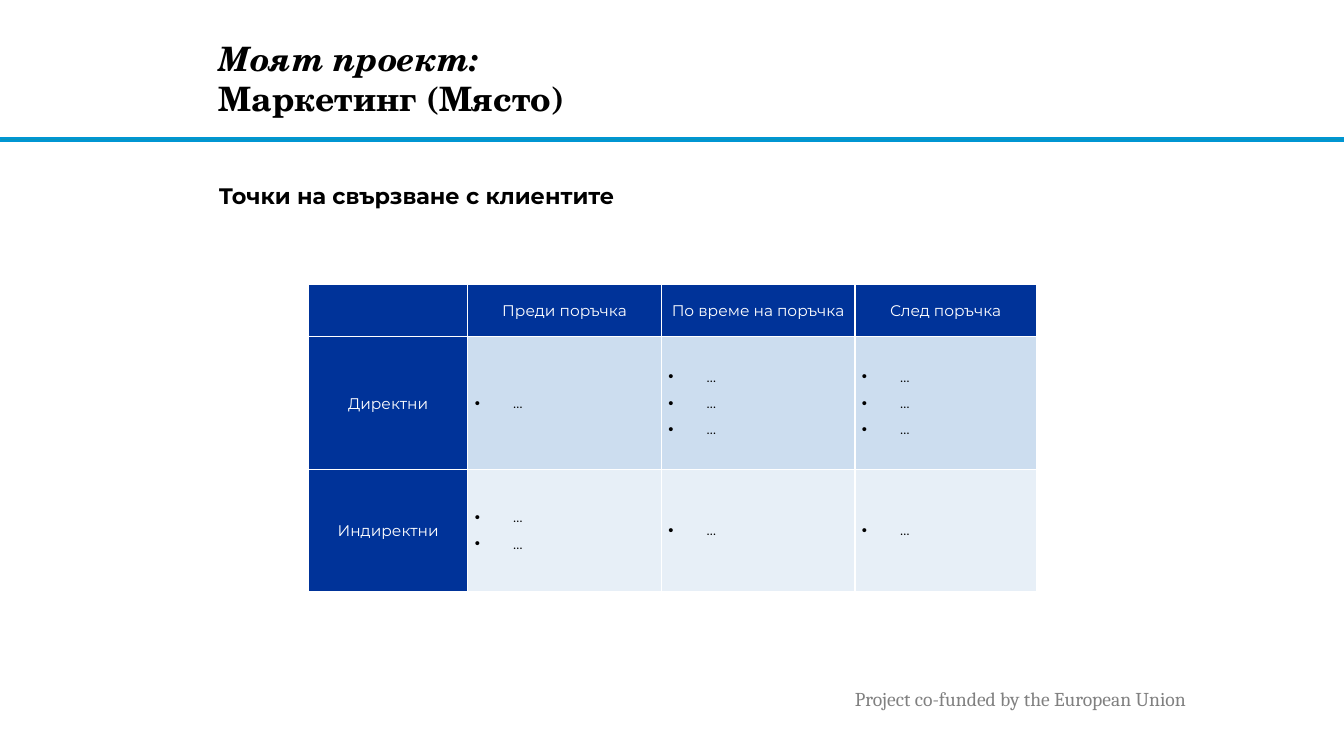
from lxml import etree
from pptx import Presentation
from pptx.dml.color import RGBColor
from pptx.enum import shapes, text
from pptx.oxml import ns
from pptx.util import Inches, Pt

# Content
TITLE = [("Моят проект:", True), ("Маркетинг (Място)", False)]
SUBTITLE = "Точки на свързване с клиентите"
FOOTER = "Project co-funded by the European Union"
HEADINGS = ["", "Преди поръчка", "По време на поръчка", "След поръчка"]
CONTACT_POINTS = [  # row label, bullets per stage, row colour
    ("Директни", [["…"], ["…"] * 3, ["…"] * 3], "CCDDEF"),
    ("Индиректни", [["…"] * 2, ["…"], ["…"]], "E7EFF7"),
]
COLUMN_WIDTHS = [1.58, 1.92, 1.92, 1.8]
ROW_HEIGHTS = [0.52, 1.32, 1.21]

# Style
BODY_FONT, TITLE_FONT, FOOTER_FONT = "Montserrat", "TeX Gyre Schola", "Cambria"
NAVY, WHITE, BLACK = "003399", "FFFFFF", "000000"
LEFT = 2.17
BULLET_INDENT = 0.38


def color(hex_value):
    return RGBColor.from_string(hex_value)


def add_text(paragraph, content, font=BODY_FONT, size=11, fill=BLACK, bold=False, italic=False):
    run = paragraph.add_run()
    run.text = content
    run.font.name = font
    run.font.size = Pt(size)
    run.font.bold = bold
    run.font.italic = italic
    run.font.color.rgb = color(fill)


def set_margins(frame, horizontal, vertical):
    frame.margin_left = frame.margin_right = Inches(horizontal)
    frame.margin_top = frame.margin_bottom = Inches(vertical)
    frame.word_wrap = True


def add_box(slide, left, top, width, height, margins):
    box = slide.shapes.add_textbox(Inches(left), Inches(top), Inches(width), Inches(height))
    set_margins(box.text_frame, *margins)
    return box.text_frame.paragraphs[0]


def add_bullet(paragraph):
    properties = paragraph._p.get_or_add_pPr()
    properties.set("marL", str(Inches(BULLET_INDENT)))
    properties.set("indent", str(-Inches(BULLET_INDENT)))
    etree.SubElement(properties, ns.qn("a:buFont"), typeface="Arial")
    etree.SubElement(properties, ns.qn("a:buChar"), char="•")


def format_cell(cell, fill):
    # Borders come before the fill in the cell properties
    properties = cell._tc.get_or_add_tcPr()
    for side in "LRTB":
        line = etree.SubElement(properties, ns.qn(f"a:ln{side}"), w=str(Pt(1)))
        solid = etree.SubElement(line, ns.qn("a:solidFill"))
        etree.SubElement(solid, ns.qn("a:srgbClr"), val=WHITE)
    cell.fill.solid()
    cell.fill.fore_color.rgb = color(fill)
    cell.margin_left = cell.margin_right = Inches(0.07)
    cell.margin_top = cell.margin_bottom = 0
    cell.vertical_anchor = text.MSO_ANCHOR.MIDDLE


def fill_label(cell, label):
    format_cell(cell, NAVY)
    if label:
        paragraph = cell.text_frame.paragraphs[0]
        paragraph.alignment = text.PP_ALIGN.CENTER
        paragraph.line_spacing = 1.07
        add_text(paragraph, label, fill=WHITE)


def fill_bullets(cell, items, fill):
    format_cell(cell, fill)
    frame = cell.text_frame
    for index, item in enumerate(items):
        paragraph = frame.add_paragraph() if index else frame.paragraphs[0]
        add_bullet(paragraph)
        paragraph.space_before = Pt(6 if index else 0)
        add_text(paragraph, item, size=10.5)


def add_contact_table(slide):
    table = slide.shapes.add_table(
        len(ROW_HEIGHTS), len(COLUMN_WIDTHS), Inches(3.06), Inches(2.82),
        Inches(sum(COLUMN_WIDTHS)), Inches(sum(ROW_HEIGHTS))).table
    for column, width in zip(table.columns, COLUMN_WIDTHS):
        column.width = Inches(width)
    for row, height in zip(table.rows, ROW_HEIGHTS):
        row.height = Inches(height)
    for column, heading in enumerate(HEADINGS):
        fill_label(table.cell(0, column), heading)
    for row, (label, stages, fill) in enumerate(CONTACT_POINTS, 1):
        fill_label(table.cell(row, 0), label)
        for column, items in enumerate(stages, 1):
            fill_bullets(table.cell(row, column), items, fill)


def main():
    presentation = Presentation()
    presentation.slide_width, presentation.slide_height = Inches(13.33), Inches(7.5)
    slide = presentation.slides.add_slide(presentation.slide_layouts[5])

    # Title
    title = slide.shapes.title
    title.left, title.top = Inches(LEFT), Inches(0.18)
    title.width, title.height = Inches(7.27), Inches(1.19)
    frame = title.text_frame
    set_margins(frame, 0, 0)
    frame.auto_size = text.MSO_AUTO_SIZE.NONE
    frame.vertical_anchor = text.MSO_ANCHOR.MIDDLE
    paragraph = frame.paragraphs[0]
    paragraph.alignment = text.PP_ALIGN.LEFT
    for index, (line, italic) in enumerate(TITLE):
        if index:
            paragraph.add_line_break()
        add_text(paragraph, line, font=TITLE_FONT, size=24, bold=True, italic=italic)

    # Rule under the title
    rule = slide.shapes.add_shape(
        shapes.MSO_SHAPE.RECTANGLE, 0, Inches(1.37), presentation.slide_width, Inches(0.03))
    rule.shadow.inherit = False
    rule.fill.solid()
    rule.fill.fore_color.rgb = color("0C94B7")
    rule.line.color.rgb = color("0096D3")
    rule.line.width = Pt(1)

    # Subtitle, table and footer
    add_text(add_box(slide, LEFT, 1.76, 8.49, 0.4, (0, 0.05)), SUBTITLE, size=16, bold=True)
    add_contact_table(slide)
    add_text(add_box(slide, 8.38, 6.77, 4.88, 0.34, (0.1, 0.05)), FOOTER,
             font=FOOTER_FONT, size=14, fill="808080")

    presentation.save("out.pptx")


if __name__ == "__main__":
    main()
